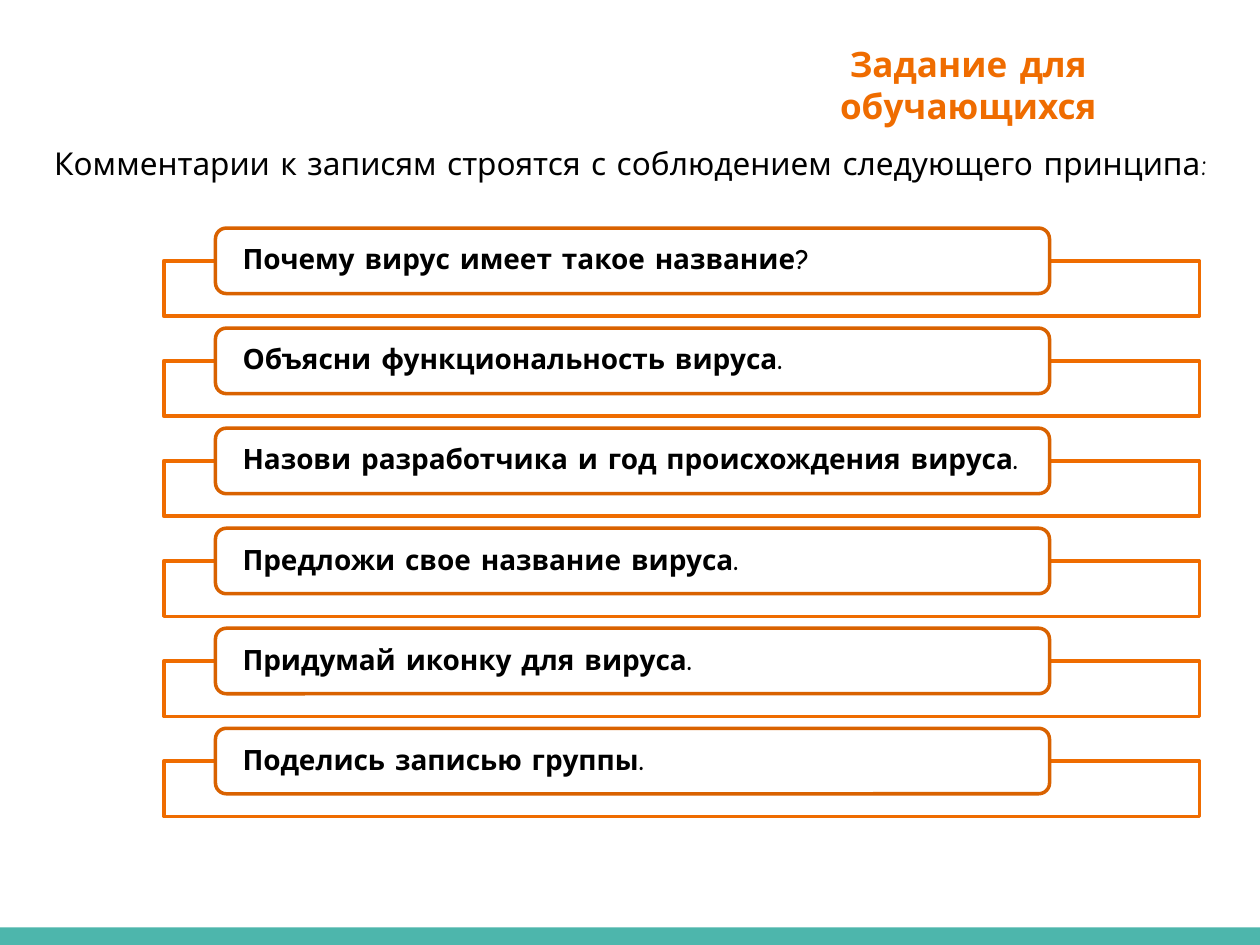
from pptx import Presentation
from pptx.dml.color import RGBColor
from pptx.enum.shapes import MSO_SHAPE
from pptx.enum.text import MSO_ANCHOR, PP_ALIGN
from pptx.util import Inches, Pt

RECT = MSO_SHAPE.RECTANGLE
ROUND = MSO_SHAPE.ROUNDED_RECTANGLE
TOP, MIDDLE = MSO_ANCHOR.TOP, MSO_ANCHOR.MIDDLE
LEFT, CENTER = PP_ALIGN.LEFT, PP_ALIGN.CENTER

ORANGE = RGBColor(0xEF, 0x6C, 0x00)
RUST = RGBColor(0xD9, 0x62, 0x00)
TEAL = RGBColor(0x4D, 0xB6, 0xAC)
WHITE = RGBColor(0xFF, 0xFF, 0xFF)
BLACK = RGBColor(0x00, 0x00, 0x00)
FONT = "Comic Neue"

TASKS = [
    "Почему вирус имеет такое название?",
    "Объясни функциональность вируса.",
    "Назови разработчика и год происхождения вируса.",
    "Предложи свое название вируса.",
    "Придумай иконку для вируса.",
    "Поделись записью группы.",
]
FIRST, STEP = 1.81, 0.794


def add_box(slide, kind, x, y, w, h, fill=None, line=None):
    box = slide.shapes.add_shape(kind, Inches(x), Inches(y), Inches(w), Inches(h))
    box.shadow.inherit = False
    if fill is None:
        box.fill.background()
    else:
        box.fill.solid()
        box.fill.fore_color.rgb = fill
    if line is None:
        box.line.fill.background()
    else:
        box.line.color.rgb = line
        box.line.width = Pt(2)
    return box


def set_text(shape, text, size, color, bold, align, anchor):
    frame = shape.text_frame
    frame.word_wrap = True
    frame.vertical_anchor = anchor
    para = frame.paragraphs[0]
    para.text = text
    para.alignment = align
    para.font.name = FONT
    para.font.size = Pt(size)
    para.font.bold = bold
    para.font.color.rgb = color
    return para


def add_label(slide, x, y, w, h, *style):
    label = slide.shapes.add_textbox(Inches(x), Inches(y), Inches(w), Inches(h))
    return set_text(label, *style)


def add_task(slide, text, y):
    add_box(slide, RECT, 1.3, y + 0.26, 8.22, 0.44, line=ORANGE)
    card = add_box(slide, ROUND, 1.71, y, 6.62, 0.52, WHITE, RUST)
    frame = card.text_frame
    frame.margin_left = frame.margin_right = Inches(0.19)
    frame.margin_top = frame.margin_bottom = 0
    para = set_text(card, text, 16, BLACK, True, LEFT, MIDDLE)
    para.line_spacing = 0.9


def main():
    deck = Presentation()
    deck.slide_width, deck.slide_height = Inches(10), Inches(7.5)
    slide = deck.slides.add_slide(deck.slide_layouts[6])

    add_box(slide, RECT, 0, 7.36, 10, 0.14, TEAL)
    add_label(slide, 5.71, 0.29, 3.95, 0.44,
              "Задание для обучающихся", 20, ORANGE, True, CENTER, TOP)
    lead = add_label(
        slide, 0.28, 0.96, 9.45, 0.51,
        "Комментарии к записям строятся с соблюдением следующего принципа:",
        18, BLACK, False, CENTER, MIDDLE)
    lead.line_spacing = 1.5
    lead.space_after = Pt(6)

    for row, text in enumerate(TASKS):
        add_task(slide, text, FIRST + row * STEP)

    deck.save("out.pptx")


if __name__ == "__main__":
    main()
